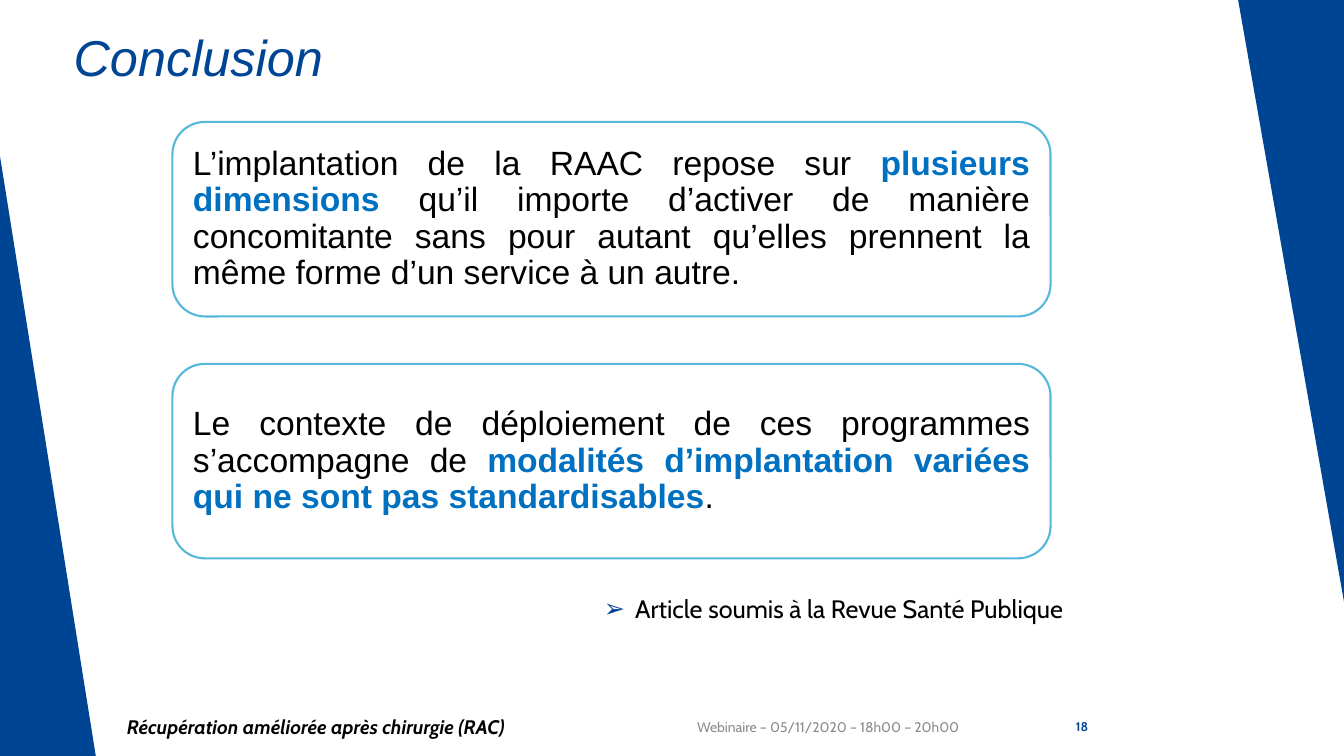
from lxml.etree import SubElement
from pptx import Presentation
from pptx.dml.color import RGBColor
from pptx.enum.shapes import MSO_SHAPE
from pptx.enum.text import MSO_ANCHOR, MSO_AUTO_SIZE, PP_ALIGN
from pptx.oxml.ns import qn
from pptx.util import Inches, Pt

COLORS = {
    "navy": "004494",
    "sky": "56B8D9",
    "accent": "0070C0",
    "black": "000000",
    "gray": "8C8C8C",
    "white": "FFFFFF",
}
TITLE = "Conclusion"
CONCLUSIONS = [
    [
        ("L’implantation de la RAAC repose sur ", False),
        ("plusieurs dimensions ", True),
        ("qu’il importe d’activer de manière concomitante sans pour autant "
         "qu’elles prennent la même forme d’un service à un autre.", False),
    ],
    [
        ("Le contexte de déploiement de ces programmes s’accompagne de ", False),
        ("modalités d’implantation variées qui ne sont pas standardisables", True),
        (".", False),
    ],
]
ARTICLE = "Article soumis à la Revue Santé Publique"
FOOTERS = [
    ("Récupération améliorée après chirurgie (RAC)", 1.16, 5.35, PP_ALIGN.LEFT,
     dict(size=14, color="black", bold=True, italic=True)),
    ("Webinaire – 05/11/2020 – 18h00 – 20h00", 6.72, 2.89, PP_ALIGN.RIGHT,
     dict(size=10, color="gray")),
    ("18", 10.14, 0.75, PP_ALIGN.RIGHT, dict(size=9, color="navy", bold=True)),
]
EDGE_TRIANGLES = [(0, 1.55, 0.95, 5.95, 0), (12.28, 0, 1.05, 5.97, 180)]
CARD_LEFT, CARD_TOP, CARD_WIDTH, CARD_HEIGHT = 1.71, 1.21, 8.71, 1.93
CARD_STEP = 2.4


def color_of(name):
    return RGBColor.from_string(COLORS[name])


def add_span(para, text, size, color, font="Cabin", bold=False, italic=False):
    span = para.add_run()
    span.text = text
    span.font.name = font
    span.font.size = Pt(size)
    span.font.bold = bold
    span.font.italic = italic
    span.font.color.rgb = color_of(color)


def add_shape(page, kind, box, fill):
    shape = page.shapes.add_shape(kind, *map(Inches, box))
    shape.shadow.inherit = False
    shape.fill.solid()
    shape.fill.fore_color.rgb = color_of(fill)
    return shape


def add_text_frame(page, *box):
    frame = page.shapes.add_textbox(*map(Inches, box)).text_frame
    frame.word_wrap = True
    return frame


def add_title(page):
    title = page.shapes.title
    title.left, title.top = Inches(0.63), Inches(0.21)
    title.width, title.height = Inches(9.4), Inches(1.44)
    title.text_frame.vertical_anchor = MSO_ANCHOR.TOP
    para = title.text_frame.paragraphs[0]
    para.alignment = PP_ALIGN.LEFT
    add_span(para, TITLE, 36, "navy", "Arial", italic=True)


def add_card(page, index, spans):
    top = CARD_TOP + index * CARD_STEP
    card = add_shape(page, MSO_SHAPE.ROUNDED_RECTANGLE,
                     (CARD_LEFT, top, CARD_WIDTH, CARD_HEIGHT), "white")
    card.line.color.rgb = color_of("sky")
    card.line.width = Pt(1.5)
    frame = card.text_frame
    frame.word_wrap = True
    frame.vertical_anchor = MSO_ANCHOR.MIDDLE
    frame.margin_left = frame.margin_right = Inches(0.11)
    frame.margin_top = frame.margin_bottom = Inches(0.11)
    para = frame.paragraphs[0]
    para.alignment = PP_ALIGN.JUSTIFY
    para.line_spacing = 0.9
    for text, strong in spans:
        add_span(para, text, 24, "accent" if strong else "black", "Arial", bold=strong)


def add_article(page):
    frame = add_text_frame(page, 5.89, 5.84, 5.92, 0.4)
    frame.auto_size = MSO_AUTO_SIZE.SHAPE_TO_FIT_TEXT
    para = frame.paragraphs[0]
    properties = para._p.get_or_add_pPr()
    properties.set("marL", str(Inches(0.31)))
    properties.set("indent", str(Inches(-0.31)))
    bullet_color = SubElement(properties, qn("a:buClr"))
    SubElement(bullet_color, qn("a:srgbClr"), val=COLORS["navy"])
    SubElement(properties, qn("a:buFont"), typeface="Arial")
    SubElement(properties, qn("a:buChar"), char="➢")
    add_span(para, ARTICLE, 18, "black")


def main():
    deck = Presentation()
    deck.slide_width, deck.slide_height = Inches(13.33), Inches(7.5)
    page = deck.slides.add_slide(deck.slide_layouts[5])
    for *box, rotation in EDGE_TRIANGLES:
        triangle = add_shape(page, MSO_SHAPE.RIGHT_TRIANGLE, box, "navy")
        triangle.line.fill.background()
        triangle.rotation = rotation
    add_title(page)
    for index, spans in enumerate(CONCLUSIONS):
        add_card(page, index, spans)
    add_article(page)
    for text, left, width, alignment, style in FOOTERS:
        frame = add_text_frame(page, left, 7.01, width, 0.4)
        frame.vertical_anchor = MSO_ANCHOR.MIDDLE
        para = frame.paragraphs[0]
        para.alignment = alignment
        add_span(para, text, **style)
    deck.save("out.pptx")


if __name__ == "__main__":
    main()
